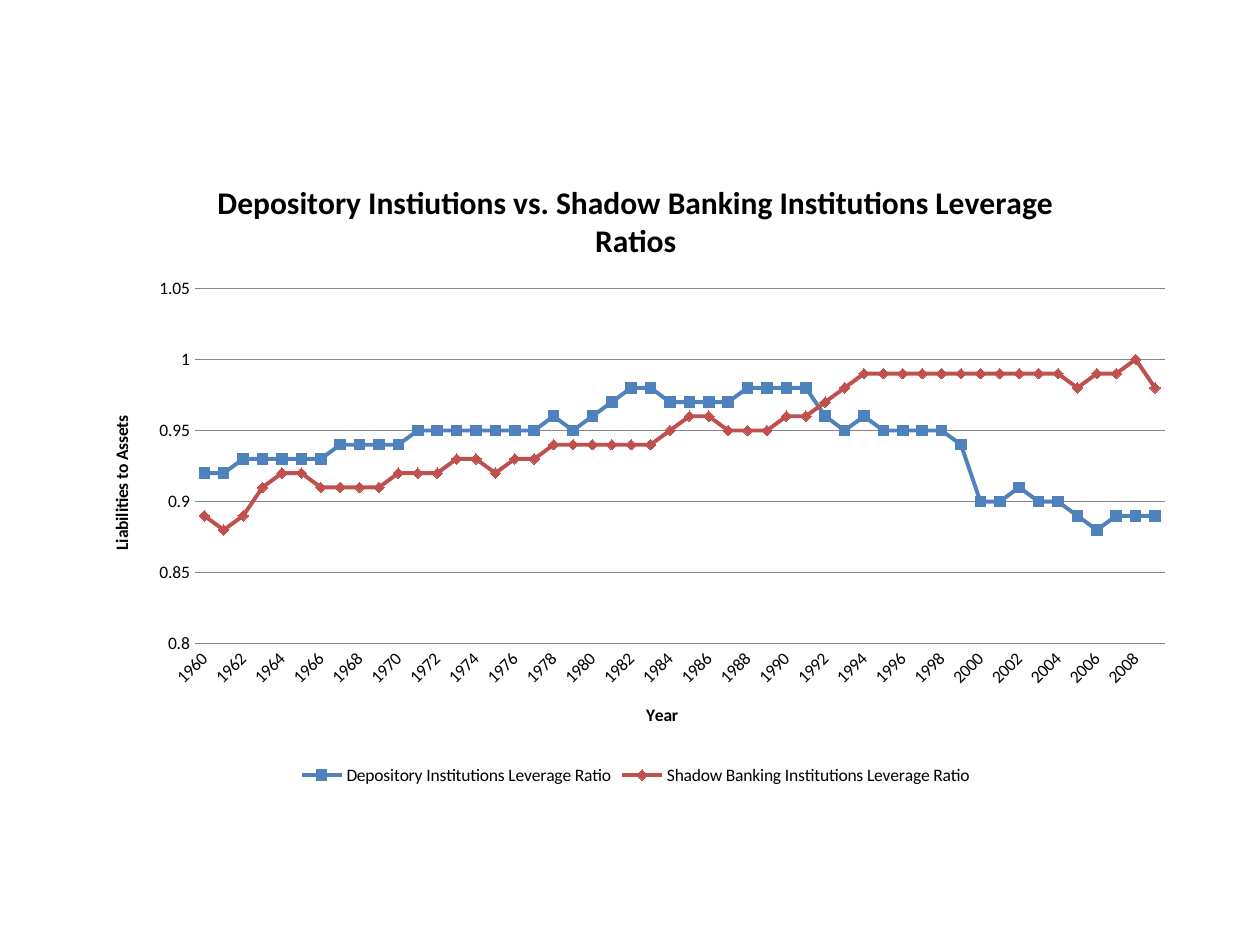
from lxml import etree
from pptx import Presentation
from pptx.chart.data import CategoryChartData
from pptx.dml.color import RGBColor
from pptx.enum.chart import XL_CHART_TYPE, XL_LEGEND_POSITION, XL_MARKER_STYLE, XL_TICK_MARK
from pptx.oxml.ns import qn
from pptx.util import Inches, Pt

LINE_MARKERS = XL_CHART_TYPE.LINE_MARKERS
LEGEND_BOTTOM = XL_LEGEND_POSITION.BOTTOM
SQUARE, DIAMOND = XL_MARKER_STYLE.SQUARE, XL_MARKER_STYLE.DIAMOND
NO_TICKS = XL_TICK_MARK.NONE

BLANK_LAYOUT = 6
BLACK, GREY = "000000", "868686"
YEARS = [str(year) for year in range(1960, 2010)]
DEPOSITORY = [
    0.92, 0.92, 0.93, 0.93, 0.93, 0.93, 0.93, 0.94, 0.94, 0.94,
    0.94, 0.95, 0.95, 0.95, 0.95, 0.95, 0.95, 0.95, 0.96, 0.95,
    0.96, 0.97, 0.98, 0.98, 0.97, 0.97, 0.97, 0.97, 0.98, 0.98,
    0.98, 0.98, 0.96, 0.95, 0.96, 0.95, 0.95, 0.95, 0.95, 0.94,
    0.9, 0.9, 0.91, 0.9, 0.9, 0.89, 0.88, 0.89, 0.89, 0.89,
]
SHADOW_BANKING = [
    0.89, 0.88, 0.89, 0.91, 0.92, 0.92, 0.91, 0.91, 0.91, 0.91,
    0.92, 0.92, 0.92, 0.93, 0.93, 0.92, 0.93, 0.93, 0.94, 0.94,
    0.94, 0.94, 0.94, 0.94, 0.95, 0.96, 0.96, 0.95, 0.95, 0.95,
    0.96, 0.96, 0.97, 0.98, 0.99, 0.99, 0.99, 0.99, 0.99, 0.99,
    0.99, 0.99, 0.99, 0.99, 0.99, 0.98, 0.99, 0.99, 1, 0.98,
]
# name, values, colour, marker
RATIOS = [
    ("Depository Institutions Leverage Ratio", DEPOSITORY, "4F81BD", SQUARE),
    ("Shadow Banking Institutions Leverage Ratio", SHADOW_BANKING, "C0504D", DIAMOND),
]


def rgb(colour):
    return RGBColor.from_string(colour)


class ChartSlide:
    def __init__(self, slide, font="Calibri", size=10):
        self.slide, self.font, self.size = slide, font, size

    def style(self, font, size=None, bold=False):
        font.name, font.size, font.bold = self.font, Pt(size or self.size), bold
        font.color.rgb = rgb(BLACK)

    def title(self, owner, text, size=None, degrees=0):
        """Give a chart or an axis a bold title, turned by degrees."""
        frame = (owner.chart_title if hasattr(owner, "chart_title") else owner.axis_title).text_frame
        frame.text = text
        self.style(frame.paragraphs[0].runs[0].font, size, bold=True)
        self.turn(frame._txBody.bodyPr, degrees)

    def turn(self, body, degrees):
        body.set("rot", str(degrees * 60000))
        body.set("vert", "horz")

    def place_plot(self, chart, **fractions):
        """Set the inner plot area as fractions of the chart."""
        area = chart._chartSpace.chart.plotArea
        for old in area.findall(qn("c:layout")):
            area.remove(old)
        layout = etree.Element(qn("c:layout"))
        manual = etree.SubElement(layout, qn("c:manualLayout"))
        settings = {"layoutTarget": "inner", "xMode": "edge", "yMode": "edge", **fractions}
        for key, value in settings.items():
            etree.SubElement(manual, qn(f"c:{key}")).set("val", str(value))
        area.insert(0, layout)

    def line_chart(self, left, top, width, height, categories, series):
        data = CategoryChartData()
        data.categories = categories
        for name, values, _, _ in series:
            data.add_series(name, values)
        chart = self.slide.shapes.add_chart(
            LINE_MARKERS, Inches(left), Inches(top), Inches(width), Inches(height), data
        ).chart
        self.style(chart.font)
        chart.plots[0].vary_by_categories = False
        for line, (_, _, colour, marker) in zip(chart.plots[0].series, series):
            line.smooth = False
            line.format.line.width = Pt(2.25)
            line.format.line.color.rgb = rgb(colour)
            line.marker.style, line.marker.size = marker, 6
            line.marker.format.fill.solid()
            line.marker.format.fill.fore_color.rgb = rgb(colour)
            line.marker.format.line.color.rgb = rgb(colour)
        chart.has_legend = True
        chart.legend.position = LEGEND_BOTTOM
        chart.legend.include_in_layout = False
        self.style(chart.legend.font)
        return chart

    def axis(self, axis, text, title_degrees=0, label_degrees=0):
        axis.major_tick_mark = axis.minor_tick_mark = NO_TICKS
        self.style(axis.tick_labels.font)
        self.turn(axis._element.find(qn("c:txPr")).find(qn("a:bodyPr")), label_degrees)
        self.title(axis, text, degrees=title_degrees)


def main():
    prs = Presentation()
    prs.slide_width, prs.slide_height = Inches(10), Inches(7.5)
    page = ChartSlide(prs.slides.add_slide(prs.slide_layouts[BLANK_LAYOUT]))

    leverage = page.line_chart(0.67, 1.23, 8.75, 5.04, YEARS, RATIOS)
    page.title(leverage, "Depository Instiutions vs. Shadow Banking Institutions Leverage Ratios", 18)
    page.place_plot(leverage, x=0.1, y=0.21, w=0.88, h=0.56)

    years = leverage.category_axis
    page.axis(years, "Year", label_degrees=-45)
    years.format.line.color.rgb = rgb(GREY)

    ratio = leverage.value_axis
    page.axis(ratio, "Liabilities to Assets", title_degrees=-90)
    ratio.minimum_scale, ratio.maximum_scale, ratio.major_unit = 0.8, 1.05, 0.05
    ratio.format.line.fill.background()
    ratio.major_gridlines.format.line.color.rgb = rgb(GREY)

    prs.save("out.pptx")


if __name__ == "__main__":
    main()
